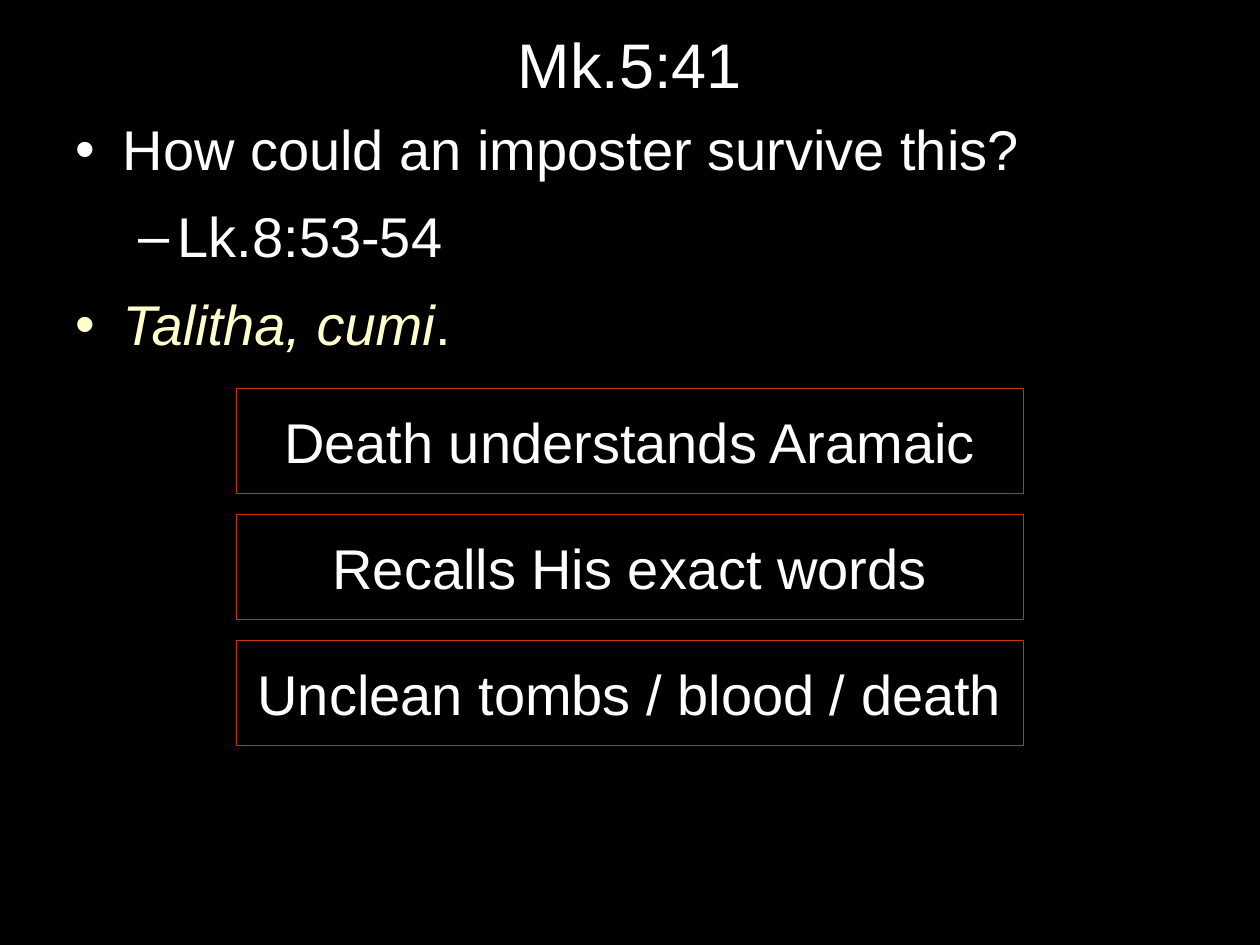
from dataclasses import dataclass

from lxml import etree
from pptx import Presentation
from pptx.dml.color import RGBColor
from pptx.enum.shapes import MSO_SHAPE
from pptx.enum.text import MSO_ANCHOR, MSO_AUTO_SIZE, PP_ALIGN
from pptx.oxml.ns import qn
from pptx.util import Pt

RECTANGLE = MSO_SHAPE.RECTANGLE
MIDDLE = MSO_ANCHOR.MIDDLE
CENTER = PP_ALIGN.CENTER
NO_AUTOFIT = MSO_AUTO_SIZE.NONE
TITLE_ONLY = 5


@dataclass(frozen=True)
class Theme:
    """Colours, font and type sizes of the slide."""
    font: str = "Arial"
    title_size: float = 36
    body_size: float = 32
    background: RGBColor = RGBColor(0, 0, 0)
    text: RGBColor = RGBColor(255, 255, 255)
    accent: RGBColor = RGBColor(255, 255, 204)
    border: RGBColor = RGBColor(204, 51, 0)


THEME = Theme()

BULLETS = [
    (0, [("How could an imposter survive this?", False)], THEME.text),
    (0 + 1, [("Lk.8:53-54", False)], THEME.text),
    (0, [("Talitha, cumi", True), (".", False)], THEME.accent),
]
BULLET_STYLES = [("•", 27, -27), ("–", 58.5, -22.5)]
STATEMENTS = [
    "Death understands Aramaic",
    "Recalls His exact words",
    "Unclean tombs / blood / death",
]


def set_font(paragraph, size, color):
    """Give a paragraph the theme font, a size and a colour."""
    paragraph.font.name = THEME.font
    paragraph.font.size = Pt(size)
    paragraph.font.color.rgb = color


def set_bullet(paragraph, level):
    """Give a paragraph the bullet and hanging indent of its level."""
    character, margin, indent = BULLET_STYLES[level]
    paragraph.level = level
    properties = paragraph._p.get_or_add_pPr()
    properties.set("marL", str(Pt(margin)))
    properties.set("indent", str(Pt(indent)))
    font = etree.SubElement(properties, qn("a:buFont"))
    font.set("typeface", THEME.font)
    bullet = etree.SubElement(properties, qn("a:buChar"))
    bullet.set("char", character)


def write_centered(shape, text, size):
    """Write one line in the middle of a shape."""
    frame = shape.text_frame
    frame.word_wrap = True
    frame.auto_size = NO_AUTOFIT
    frame.vertical_anchor = MIDDLE
    frame.text = text
    paragraph = frame.paragraphs[0]
    paragraph.alignment = CENTER
    set_font(paragraph, size, THEME.text)


def add_title(slide, text, left, top, width, height):
    """Place the title placeholder in the given box."""
    title = slide.shapes.title
    title.left, title.top = Pt(left), Pt(top)
    title.width, title.height = Pt(width), Pt(height)
    write_centered(title, text, THEME.title_size)


def add_bullets(slide, bullets, left, top, width, height):
    """Place the bulleted text in the given box."""
    box = slide.shapes.add_textbox(Pt(left), Pt(top), Pt(width), Pt(height))
    frame = box.text_frame
    frame.word_wrap = True
    for index, (level, runs, color) in enumerate(bullets):
        paragraph = frame.add_paragraph() if index else frame.paragraphs[0]
        set_bullet(paragraph, level)
        paragraph.line_spacing = 0.9
        paragraph.space_before = Pt(0.2 * THEME.body_size if index else 0)
        paragraph.space_after = Pt(9)
        set_font(paragraph, THEME.body_size, color)
        for text, italic in runs:
            run = paragraph.add_run()
            run.text = text
            run.font.italic = italic


def add_statements(slide, statements, left, top, width, height, gap):
    """Stack framed statements with equal gaps in the given box."""
    count = len(statements)
    box_height = (height - gap * (count - 1)) / count
    for index, text in enumerate(statements):
        box_top = top + index * (box_height + gap)
        shape = slide.shapes.add_shape(
            RECTANGLE, Pt(left), Pt(box_top), Pt(width), Pt(box_height))
        shape.shadow.inherit = False
        shape.fill.solid()
        shape.fill.fore_color.rgb = THEME.background
        shape.line.color.rgb = THEME.border
        shape.line.width = Pt(0.75)
        write_centered(shape, text, THEME.body_size)


def main():
    """Build the slide and save it."""
    presentation = Presentation()
    presentation.slide_width, presentation.slide_height = Pt(720), Pt(540)
    slide = presentation.slides.add_slide(
        presentation.slide_layouts[TITLE_ONLY])
    slide.background.fill.solid()
    slide.background.fill.fore_color.rgb = THEME.background
    add_title(slide, "Mk.5:41", 36, 6, 648, 60)
    add_bullets(slide, BULLETS, 36, 66, 648, 444)
    add_statements(slide, STATEMENTS, 135, 222, 450, 204, gap=12)
    presentation.save("out.pptx")


if __name__ == "__main__":
    main()
